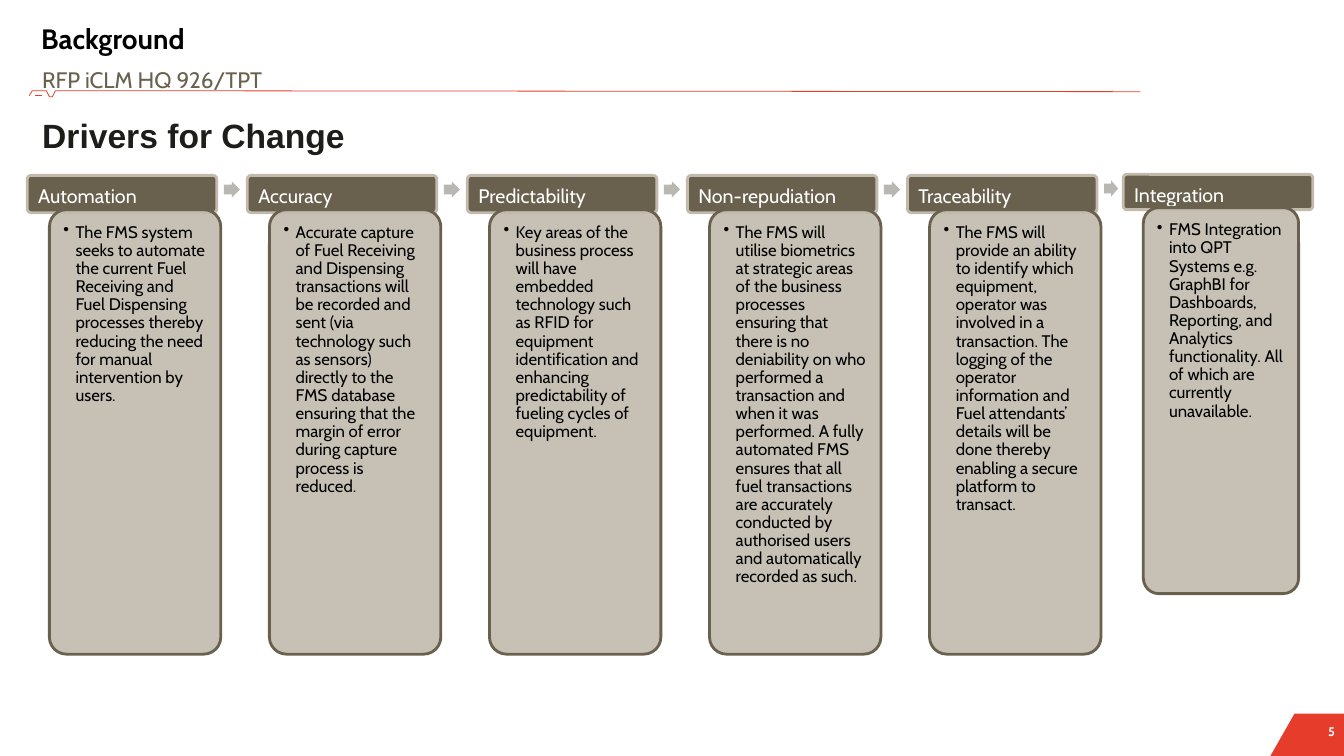
import pptx
import pptx.util
import pptx.dml.color
import pptx.enum.shapes
import pptx.enum.text
import pptx.oxml
import pptx.oxml.ns

Inches = pptx.util.Inches
Pt = pptx.util.Pt
KIND = pptx.enum.shapes.MSO_SHAPE
ANCHOR = pptx.enum.text.MSO_ANCHOR
ALIGN = pptx.enum.text.PP_ALIGN

COLORS = {"red": "E63C2B", "brown": "69614E", "sand": "C2BBAD", "grey": "B9B7B2",
          "white": "FFFFFF", "black": "000000", "ink": "1D1D1A"}

DRIVERS = [
    ("Automation", "The FMS system seeks to automate the current Fuel Receiving and Fuel "
     "Dispensing processes thereby reducing the need for manual intervention by users."),
    ("Accuracy", "Accurate capture of Fuel Receiving and Dispensing transactions will be "
     "recorded and sent (via technology such as sensors) directly to the FMS database "
     "ensuring that the margin of error during capture process is reduced."),
    ("Predictability", "Key areas of the business process will have embedded technology such "
     "as RFID for equipment identification and enhancing predictability of fueling cycles "
     "of equipment."),
    ("Non-repudiation", "The FMS will utilise biometrics at strategic areas of the business "
     "processes ensuring that there is no deniability on who performed a transaction and "
     "when it was performed. A fully automated FMS ensures that all fuel transactions are "
     "accurately conducted by authorised users and automatically recorded as such."),
    ("Traceability", "The FMS will provide an ability to identify which equipment, operator "
     "was involved in a transaction. The logging of the operator information and Fuel "
     "attendants’ details will be done thereby enabling a secure platform to transact."),
    ("Integration", "FMS Integration into QPT Systems e.g. GraphBI for Dashboards, Reporting, "
     "and Analytics functionality. All of which are currently unavailable."),
]

# Boxes are left, top, width, height in inches
LEFT, PITCH = 0.27, (9 - 0.27) / 4
LAST = {"head": (11.14, 1.73, 1.88, 0.35), "card": (11.34, 2.06, 1.54, 3.83)}
LAST_ARROW = (10.95, 1.79, 0.14, 0.16)

CORNER = [(12.84, 7.08), (13.33, 7.08), (13.33, 7.5), (12.6, 7.5)]
RULE = [(11.31, 0.91), (0.55, 0.9), (0.52, 0.96), (0.49, 0.96), (0.46, 0.9),
        (0.32, 0.9), (0.29, 0.95)]
TICK = [(0.35, 0.95), (0.42, 0.95)]

deck = pptx.Presentation()
deck.slide_width, deck.slide_height = Inches(13.33), Inches(7.5)
slide = deck.slides.add_slide(deck.slide_layouts[6])


def rgb(name):
    return pptx.dml.color.RGBColor.from_string(COLORS[name])


def paint(shape, fill=None, line=None, width=2):
    shape.shadow.inherit = False
    if fill:
        shape.fill.solid()
        shape.fill.fore_color.rgb = rgb(fill)
    else:
        shape.fill.background()
    if line:
        shape.line.color.rgb = rgb(line)
        shape.line.width = Pt(width)
    else:
        shape.line.fill.background()
    return shape


def draw(kind, box, adjust, **look):
    shape = slide.shapes.add_shape(kind, *map(Inches, box))
    for i, value in enumerate(adjust):
        shape.adjustments[i] = value
    return paint(shape, **look)


def trace(points, closed=False, **look):
    points = [(Inches(x), Inches(y)) for x, y in points]
    path = slide.shapes.build_freeform(*points[0])
    path.add_line_segments(points[1:], close=closed)
    return paint(path.convert_to_shape(), **look)


def write(text, shape=None, box=None, size=12, color="black", bold=False, font="Cabin",
          align=ALIGN.LEFT, anchor=ANCHOR.TOP, inset=(0.1, 0.05, 0.1, 0.05),
          space=None, bullet=False):
    """Put text in a shape, or in a new text box when only a box is given."""
    shape = shape or slide.shapes.add_textbox(*map(Inches, box))
    frame = shape.text_frame
    frame.word_wrap = True
    frame.vertical_anchor = anchor
    (frame.margin_left, frame.margin_top,
     frame.margin_right, frame.margin_bottom) = map(Inches, inset)
    para = frame.paragraphs[0]
    para.text = text
    para.alignment = align
    if space:
        para.line_spacing = space
    if bullet:
        props = para._p.get_or_add_pPr()
        props.set("marL", str(Inches(0.12)))
        props.set("indent", str(-Inches(0.12)))
        mark = pptx.oxml.parse_xml(
            '<a:buChar %s char="•"/>' % pptx.oxml.ns.nsdecls("a"))
        props.append(mark)
    style = para.runs[0].font
    style.name, style.size, style.bold = font, Pt(size), bold
    style.color.rgb = rgb(color)


def fade(shape, percent):
    """Set the opacity of a solid fill."""
    hue = shape.fill._xPr.find(".//" + pptx.oxml.ns.qn("a:srgbClr"))
    hue.append(pptx.oxml.parse_xml(
        '<a:alpha %s val="%d"/>' % (pptx.oxml.ns.nsdecls("a"), percent * 1000)))


def column(title, body, head, card):
    label = draw(KIND.ROUNDED_RECTANGLE, head, [0.1], fill="brown", line="sand")
    write(title, label, size=14, color="white", space=0.9, inset=(0.1, 0.1, 0.1, 0.06))
    panel = draw(KIND.ROUNDED_RECTANGLE, card, [0.1], fill="sand", line="brown")
    fade(panel, 90)
    write(body, panel, space=0.9, bullet=True, inset=(0.09,) * 4)


trace(CORNER, closed=True, fill="red")
write("5", box=(12.67, 7.15, 0.57, 0.23), size=9, color="white", bold=True,
      align=ALIGN.RIGHT, anchor=ANCHOR.BOTTOM, inset=(0, 0, 0, 0.05))
for stroke in (RULE, TICK):
    trace(stroke, line="red", width=0.56)

write("RFP iCLM HQ 926/TPT", box=(0.32, 0.58, 6.46, 0.85), size=16, color="brown", space=1.1)
write("Background", box=(0.31, 0.16, 11.02, 0.44), size=20, bold=True, anchor=ANCHOR.MIDDLE)

for i, (title, body) in enumerate(DRIVERS[:-1]):
    x = LEFT + i * PITCH
    column(title, body, (x, 1.74, 1.88, 0.37), (x + 0.22, 2.08, 1.7, 4.41))
    final = i == len(DRIVERS) - 2
    spot = LAST_ARROW if final else (x + 1.95, 1.8, 0.16, 0.16)
    arrow = draw(KIND.RIGHT_ARROW, spot, [0.6, 0.5], fill="grey")
    if final:
        arrow.rotation = 359.6
column(*DRIVERS[-1], **LAST)

write("Drivers for Change", box=(0.32, 1.1, 10.11, 0.5), size=24, color="ink", bold=True,
      font="Arial", anchor=ANCHOR.MIDDLE, space=Pt(27.9))

deck.save("out.pptx")
